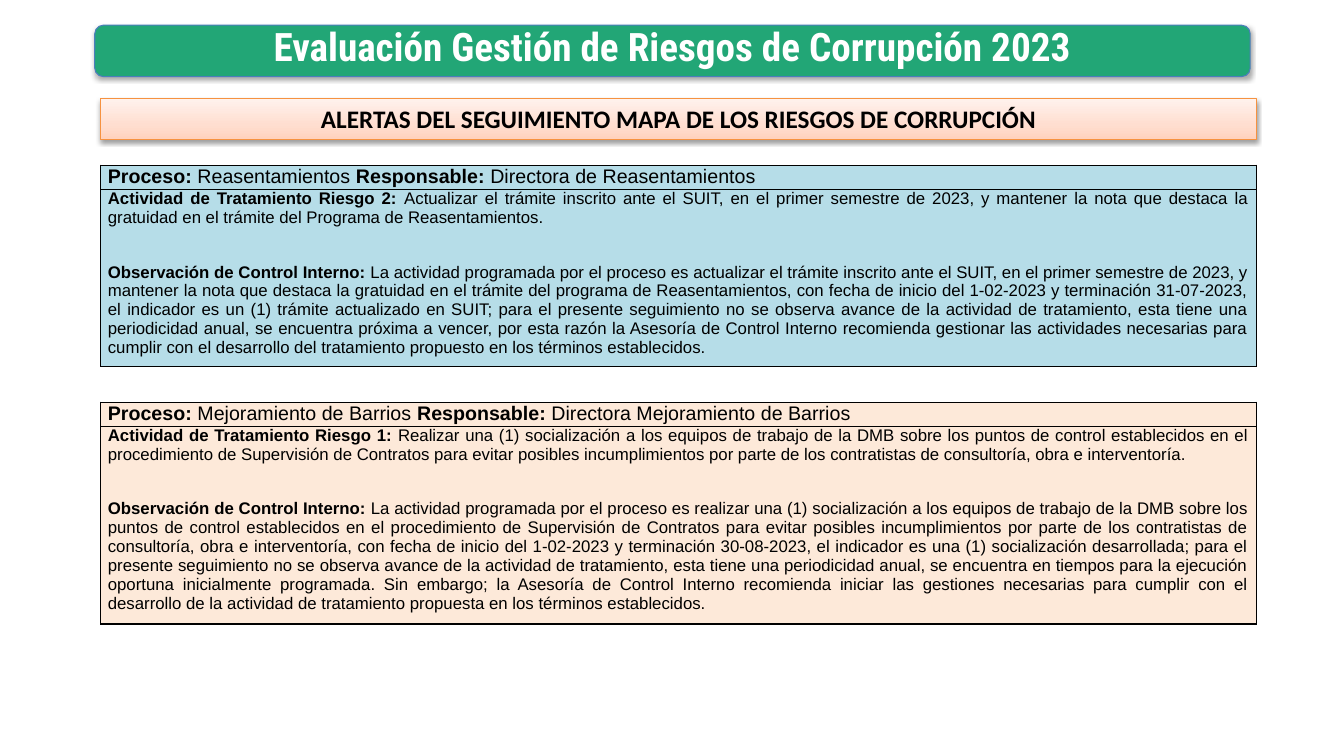
from copy import deepcopy

from lxml.etree import SubElement
from pptx import Presentation
from pptx.dml.color import RGBColor
from pptx.enum.shapes import MSO_SHAPE
from pptx.enum.text import MSO_ANCHOR, MSO_AUTO_SIZE, PP_ALIGN
from pptx.oxml.ns import qn
from pptx.util import Inches, Pt

GREEN = RGBColor(0x22, 0xA6, 0x76)
BLUE_EDGE = RGBColor(0x4B, 0x7E, 0xBC)
ORANGE_EDGE = RGBColor(0xF6, 0x92, 0x40)
PEACH_STOPS = [(0, RGBColor(0xFF, 0xD2, 0xBD)),
               (0.35, RGBColor(0xFF, 0xDE, 0xD0)),
               (1, RGBColor(0xFF, 0xF2, 0xED))]
LIGHT_BLUE = RGBColor(0xB6, 0xDD, 0xE8)
CREAM = RGBColor(0xFD, 0xE9, 0xD9)
WHITE = RGBColor(0xFF, 0xFF, 0xFF)
BLACK = RGBColor(0, 0, 0)

HEADER_HEIGHT = 0.24

# Each alert: top, height, colour, header runs, activity runs, observation runs
ALERTS = [
    (1.64, 2.0, LIGHT_BLUE,
     ["Proceso: ", "Reasentamientos ", "Responsable:", " Directora de Reasentamientos"],
     ["Actividad de Tratamiento Riesgo 2: ",
      "Actualizar el trámite inscrito ante el SUIT, en el primer semestre de 2023, y mantener "
      "la nota que destaca la gratuidad en el trámite del Programa de Reasentamientos."],
     ["Observación de Control Interno:",
      " La actividad programada por el proceso es actualizar el trámite inscrito ante el SUIT, "
      "en el primer semestre de 2023, y mantener la nota que destaca la gratuidad en el trámite "
      "del programa de Reasentamientos, con fecha de inicio del 1-02-2023 y terminación "
      "31-07-2023, el indicador es un (1) trámite actualizado en SUIT; para el presente "
      "seguimiento no se observa avance de la actividad de tratamiento, esta tiene una "
      "periodicidad anual, se encuentra próxima a vencer, por esta razón la Asesoría de Control "
      "Interno recomienda gestionar las actividades necesarias para cumplir con el desarrollo "
      "del tratamiento propuesto en los términos establecidos."]),
    (3.99, 2.2, CREAM,
     ["Proceso: ", "Mejoramiento de Barrios", " Responsable:",
      " Directora Mejoramiento de Barrios"],
     ["Actividad de Tratamiento Riesgo 1: ",
      "Realizar una (1) socialización a los equipos de trabajo de la DMB sobre los puntos de "
      "control establecidos en el procedimiento de Supervisión de Contratos para evitar posibles "
      "incumplimientos por parte de los contratistas de consultoría, obra e interventoría."],
     ["Observación de Control Interno:",
      " La actividad programada por el proceso es realizar una (1) socialización a los equipos "
      "de trabajo de la DMB sobre los puntos de control establecidos en el procedimiento de "
      "Supervisión de Contratos para evitar posibles incumplimientos por parte de los "
      "contratistas de consultoría, obra e interventoría, con fecha de inicio del 1-02-2023 y "
      "terminación 30-08-2023, el indicador es una (1) socialización desarrollada; para el "
      "presente seguimiento no se observa avance de la actividad de tratamiento, esta tiene una "
      "periodicidad anual, se encuentra en tiempos para la ejecución oportuna inicialmente "
      "programada. Sin embargo; la Asesoría de Control Interno recomienda iniciar las gestiones "
      "necesarias para cumplir con el desarrollo de la actividad de tratamiento propuesta en "
      "los términos establecidos."]),
]


def style_font(font, name, size, color, bold):
    font.name, font.size, font.bold = name, Pt(size), bold
    font.color.rgb = color


def add_shadow(shape, opacity, distance):
    shape.shadow.inherit = False
    effects = shape._element.spPr.find(qn("a:effectLst"))
    shadow = SubElement(effects, qn("a:outerShdw"), blurRad=str(Pt(3.1)),
                        dist=str(Pt(distance)), dir="5400000", rotWithShape="0")
    color = SubElement(shadow, qn("a:srgbClr"), val=str(BLACK))
    SubElement(color, qn("a:alpha"), val=str(opacity * 1000))


def add_banner(slide, kind, box, edge):
    banner = slide.shapes.add_shape(kind, *map(Inches, box))
    banner.line.color.rgb = edge
    banner.line.width = Pt(0.75)
    return banner


def add_title(slide, left, top, width, height):
    # Green band, placed behind the title
    band = add_banner(slide, MSO_SHAPE.ROUNDED_RECTANGLE,
                      (left + 0.94, top + 0.15, 11.46, 0.51), BLUE_EDGE)
    band.fill.solid()
    band.fill.fore_color.rgb = GREEN
    add_shadow(band, 35, 1.8)

    title = slide.shapes.title
    title._element.addprevious(band._element)
    title.left, title.top = Inches(left), Inches(top)
    title.width, title.height = Inches(width), Inches(height)
    frame = title.text_frame
    frame.text = "Evaluación Gestión de Riesgos de Corrupción 2023"
    frame.auto_size = MSO_AUTO_SIZE.NONE
    frame.vertical_anchor = MSO_ANCHOR.MIDDLE
    frame.paragraphs[0].alignment = PP_ALIGN.CENTER
    style_font(frame.paragraphs[0].runs[0].font, "Roboto Condensed", 28, WHITE, True)


def add_subtitle(slide, *box):
    subtitle = add_banner(slide, MSO_SHAPE.RECTANGLE, box, ORANGE_EDGE)
    # Three-stop gradient, darkest at the bottom
    subtitle.fill.gradient()
    subtitle.fill.gradient_angle = 90
    stops = subtitle._element.spPr.find(qn("a:gradFill")).find(qn("a:gsLst"))
    stops.append(deepcopy(stops[-1]))
    for stop, (position, color) in zip(subtitle.fill.gradient_stops, PEACH_STOPS):
        stop.position = position
        stop.color.rgb = color
    add_shadow(subtitle, 38, 1.6)

    frame = subtitle.text_frame
    frame.text = "ALERTAS DEL SEGUIMIENTO MAPA DE LOS RIESGOS DE CORRUPCIÓN"
    frame.vertical_anchor = MSO_ANCHOR.MIDDLE
    frame.paragraphs[0].alignment = PP_ALIGN.CENTER
    style_font(frame.paragraphs[0].runs[0].font, "Calibri", 18, BLACK, True)


def write_labelled(paragraph, parts, size):
    """Labels and values alternate: bold, regular, bold, regular."""
    paragraph.alignment = PP_ALIGN.JUSTIFY
    for index, part in enumerate(parts):
        run = paragraph.add_run()
        run.text = part
        style_font(run.font, "Arial", size, BLACK, index % 2 == 0)


def format_cell(cell, color):
    cell.margin_left = cell.margin_right = Inches(0.07)
    cell.margin_top = cell.margin_bottom = 0
    properties = cell._tc.get_or_add_tcPr()
    for side in ("a:lnL", "a:lnR", "a:lnT", "a:lnB"):
        border = SubElement(properties, qn(side), w=str(Pt(1)))
        SubElement(SubElement(border, qn("a:solidFill")), qn("a:srgbClr"), val=str(BLACK))
    cell.fill.solid()
    cell.fill.fore_color.rgb = color


def add_alert(slide, left, top, width, height, color, header, activity, observation):
    table = slide.shapes.add_table(2, 1, Inches(left), Inches(top),
                                   Inches(width), Inches(height)).table
    table.first_row = table.horz_banding = False
    table.rows[0].height = Inches(HEADER_HEIGHT)
    table.rows[1].height = Inches(height - HEADER_HEIGHT)
    header_cell, body_cell = table.cell(0, 0), table.cell(1, 0)
    for cell in (header_cell, body_cell):
        format_cell(cell, color)

    write_labelled(header_cell.text_frame.paragraphs[0], header, 14)
    body = body_cell.text_frame
    activity_line, observation_line = body.paragraphs[0], body.add_paragraph()
    observation_line.space_before = Pt(19.5)
    for line, parts in ((activity_line, activity), (observation_line, observation)):
        line.space_after = Pt(6)
        write_labelled(line, parts, 12)


def main():
    deck = Presentation()
    deck.slide_width, deck.slide_height = Inches(13.33), Inches(7.5)
    slide = deck.slides.add_slide(deck.slide_layouts[0])
    unused = slide.placeholders[1]._element
    unused.getparent().remove(unused)

    add_title(slide, 0, 0.1, 13.33, 0.71)
    add_subtitle(slide, 1, 0.98, 11.46, 0.4)
    for top, height, *content in ALERTS:
        add_alert(slide, 1, top, 11.46, height, *content)
    deck.save("out.pptx")


if __name__ == "__main__":
    main()
